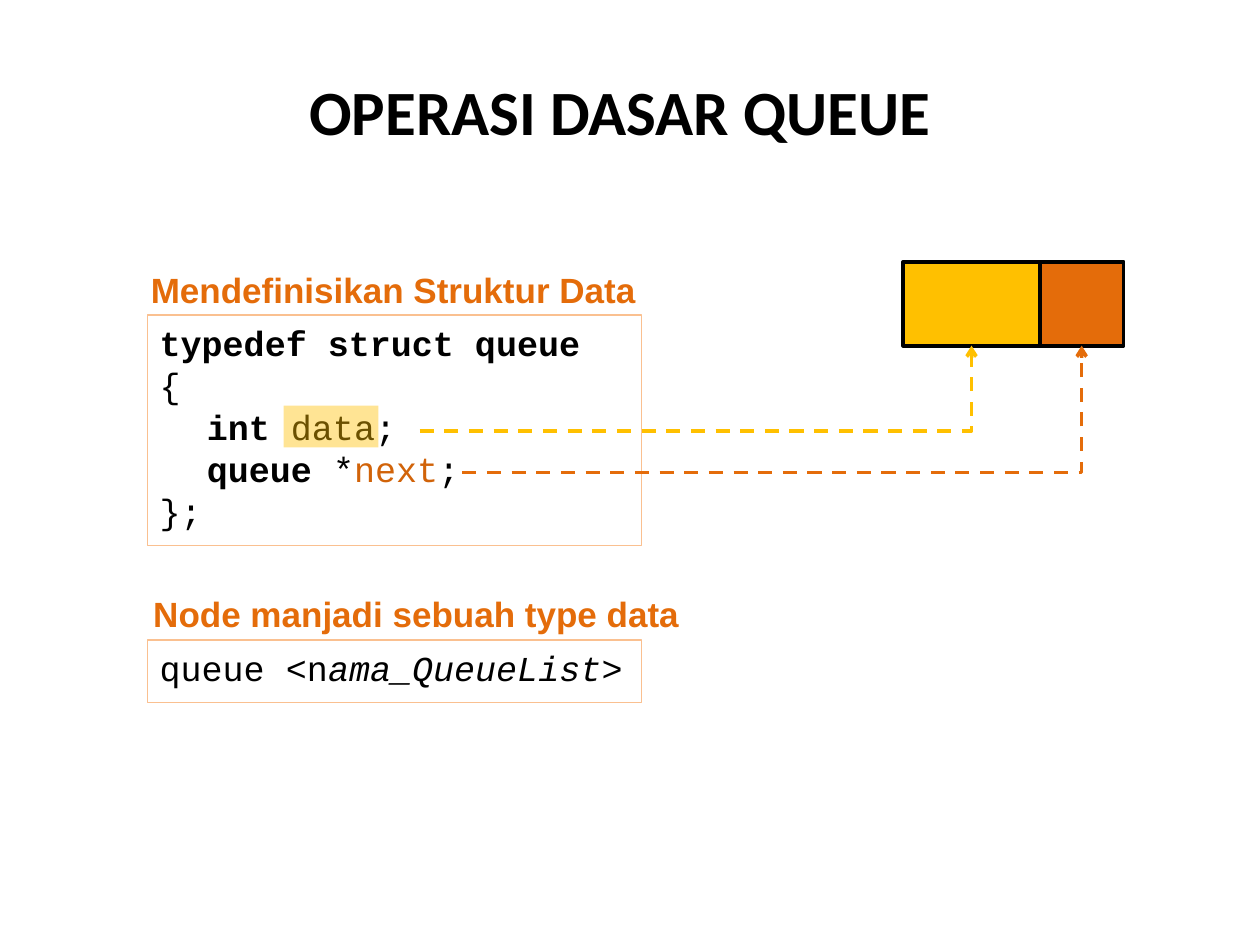
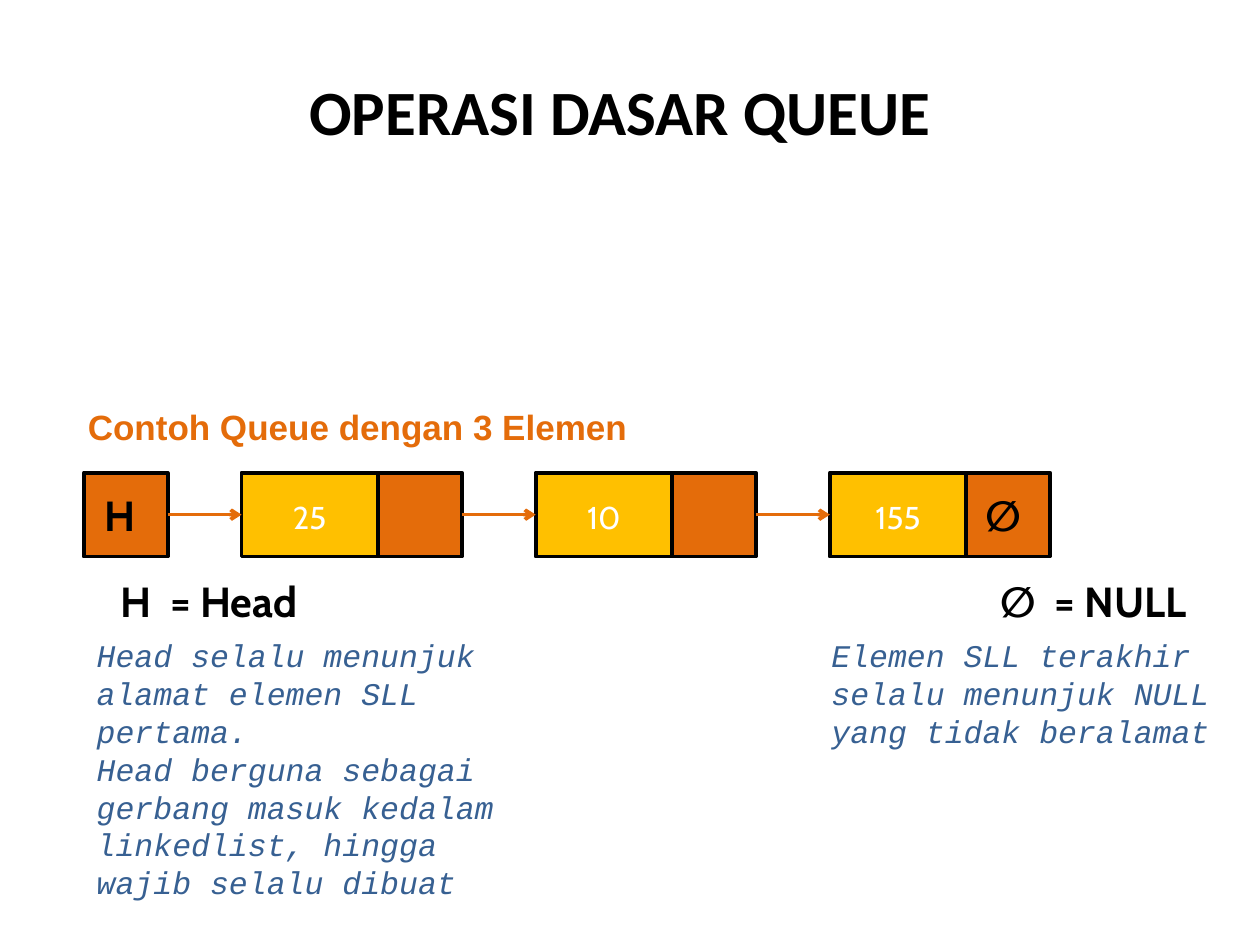
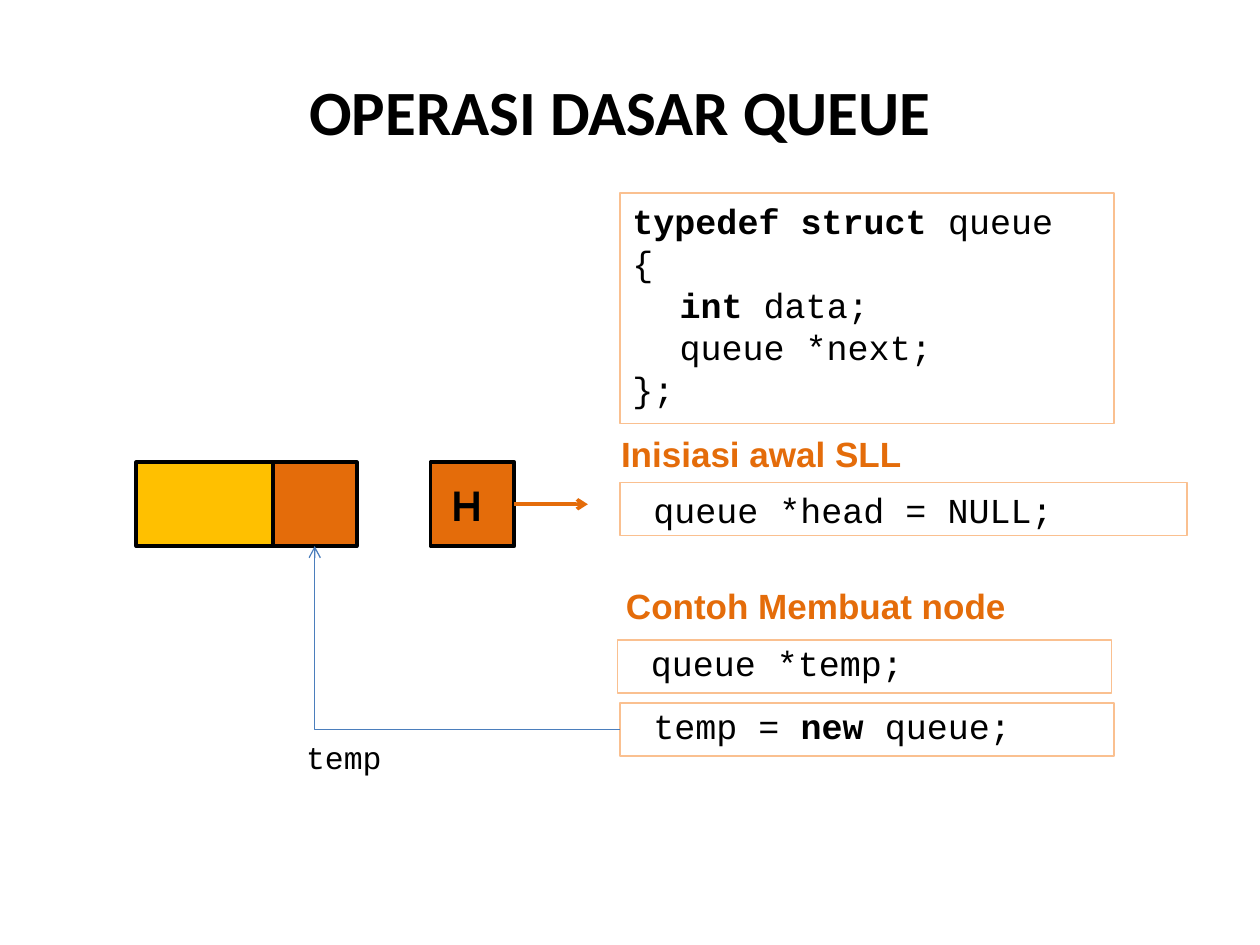
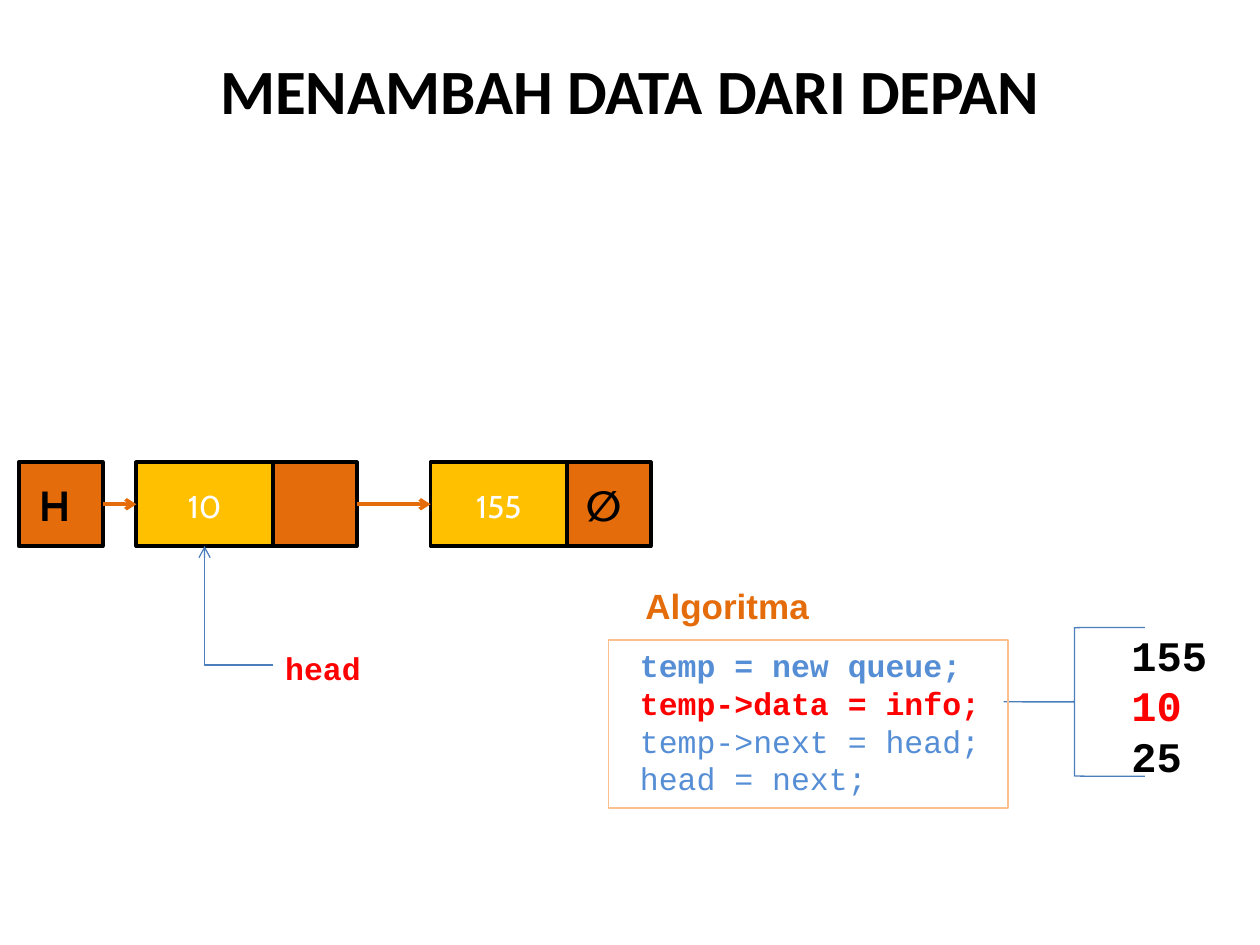
import dataclasses
from typing import NamedTuple, Optional

import lxml.etree
import pptx
import pptx.dml.color
import pptx.enum.dml
import pptx.enum.shapes
import pptx.enum.text
import pptx.oxml.ns
import pptx.presentation
import pptx.shapes.autoshape
import pptx.shapes.connector
import pptx.slide
import pptx.util

Cm = pptx.util.Cm
Pt = pptx.util.Pt
qn = pptx.oxml.ns.qn
RECTANGLE = pptx.enum.shapes.MSO_SHAPE.RECTANGLE
CENTER = pptx.enum.text.PP_ALIGN.CENTER
TOP = pptx.enum.text.MSO_ANCHOR.TOP
MIDDLE = pptx.enum.text.MSO_ANCHOR.MIDDLE

COLOURS = {
    "black": "000000",
    "white": "FFFFFF",
    "data": "FFC000",
    "pointer": "E46C0A",
    "next": "D16309",
    "panel": "FAC090",
    "note": "376092",
    "step": "558ED5",
    "link": "4B7EBC",
    "red": "FF0000",
}

# All lengths below are centimetres.
CELL = 1.69
DATA_WIDTH = 2.75
CODE_INDENT = 0.95
CAPTION_HEIGHT = 1.27
CHAIN_STEP = 5.93


@dataclasses.dataclass(frozen=True)
class Style:
    font: str
    size: float
    colour: str = "black"
    bold: bool = False
    italic: bool = False


class Run(NamedTuple):
    text: str
    style: Style


@dataclasses.dataclass(frozen=True)
class Line:
    runs: tuple[Run, ...]
    indent: float = 0


class Box(NamedTuple):
    left: float
    top: float
    width: float
    height: float


class Node(NamedTuple):
    data: pptx.shapes.autoshape.Shape
    pointer: pptx.shapes.autoshape.Shape


TITLE = Style("Calibri", 36, bold=True)
CAPTION = Style("Arial", 20, "pointer", bold=True)
CODE = Style("Courier New", 20)
KEYWORD = dataclasses.replace(CODE, bold=True)
STEP = Style("Courier New", 18, "step")
NOTE = Style("Courier New", 18, "note", italic=True)
VALUE = Style("Cabin", 18, "white")
SYMBOL = Style("Cabin", 24, bold=True)
NUMBER = Style("Courier New", 24, bold=True)


def line(text: str, style: Style, indent: float = 0) -> Line:
    return Line((Run(text, style),), indent)


def rgb(name: str) -> pptx.dml.color.RGBColor:
    return pptx.dml.color.RGBColor.from_string(COLOURS[name])


def write(frame, lines: list[Line], align=None, anchor=TOP, spacing: Optional[float] = None) -> None:
    frame.word_wrap = True
    frame.vertical_anchor = anchor
    for number, content in enumerate(lines):
        paragraph = frame.add_paragraph() if number else frame.paragraphs[0]
        paragraph.alignment = align or pptx.enum.text.PP_ALIGN.LEFT
        if spacing:
            paragraph.line_spacing = spacing
        if content.indent:
            paragraph._p.get_or_add_pPr().set("marL", str(Cm(content.indent)))
        for text, style in content.runs:
            run = paragraph.add_run()
            run.text = text
            run.font.name = style.font
            run.font.size = Pt(style.size)
            run.font.bold = style.bold
            run.font.italic = style.italic
            run.font.color.rgb = rgb(style.colour)


def add_text(slide: pptx.slide.Slide, box: Box, lines: list[Line], align=None,
             anchor=TOP, top_inset: float = 0.13) -> None:
    frame = slide.shapes.add_textbox(*map(Cm, box)).text_frame
    frame.margin_top = Cm(top_inset)
    write(frame, lines, align, anchor)


def add_figure(shapes, box: Box, fill: Optional[str] = None, outline: Optional[str] = None,
               weight: float = 0.75, kind=RECTANGLE) -> pptx.shapes.autoshape.Shape:
    figure = shapes.add_shape(kind, *map(Cm, box))
    figure.shadow.inherit = False
    if fill:
        figure.fill.solid()
        figure.fill.fore_color.rgb = rgb(fill)
    else:
        figure.fill.background()
    if outline:
        figure.line.color.rgb = rgb(outline)
        figure.line.width = Pt(weight)
    else:
        figure.line.fill.background()
    return figure


def add_title(slide: pptx.slide.Slide, text: str, left: float = 1.07, top: float = 0.64) -> None:
    add_text(slide, Box(left, top, 22.86, 3.18), [line(text, TITLE)], CENTER, MIDDLE)


def add_caption(slide: pptx.slide.Slide, left: float, top: float, width: float,
                text: str, indent: float = 0) -> None:
    add_text(slide, Box(left, top, width, CAPTION_HEIGHT), [line(text, CAPTION, indent)])


def add_panel(slide: pptx.slide.Slide, box: Box, lines: list[Line],
              spacing: Optional[float] = None) -> None:
    """Outlined box of code."""
    panel = add_figure(slide.shapes, box, outline="panel")
    write(panel.text_frame, lines, spacing=spacing)


def add_pointer(slide: pptx.slide.Slide, left: float, top: float,
                symbol: str = "") -> pptx.shapes.autoshape.Shape:
    cell = add_figure(slide.shapes, Box(left, top, CELL, CELL), "pointer", "black", 2.25)
    if symbol:
        add_text(slide, Box(left + 0.03, top + 0.21, 1.42, 1.27), [line(symbol, SYMBOL)], CENTER)
    return cell


def add_node(slide: pptx.slide.Slide, left: float, top: float,
             value: str = "", symbol: str = "") -> Node:
    """Data cell with its value, and the pointer cell to its right."""
    pointer = add_pointer(slide, left + DATA_WIDTH, top, symbol)
    shapes = slide.shapes.add_group_shape().shapes if value else slide.shapes
    data = add_figure(shapes, Box(left, top, DATA_WIDTH, CELL), "data", "black", 2.25)
    if value:
        width = 0.51 + 0.36 * len(value)
        label = add_figure(
            shapes, Box(left + (DATA_WIDTH - width) / 2, top + 0.38, width, 1.02), "data")
        write(label.text_frame, [line(value, VALUE)], CENTER)
        label.text_frame.word_wrap = False
    return Node(data, pointer)


def style_arrow(arrow: pptx.shapes.connector.Connector, colour: str,
                weight: float, dashed: bool = False) -> None:
    arrow.line.color.rgb = rgb(colour)
    arrow.line.width = Pt(weight)
    if dashed:
        arrow.line.dash_style = pptx.enum.dml.MSO_LINE.DASH
    properties = arrow._element.spPr
    lxml.etree.SubElement(properties.find(qn("a:ln")), qn("a:tailEnd"), type="arrow")
    lxml.etree.SubElement(properties, qn("a:effectLst"))


def add_link(slide: pptx.slide.Slide, source: pptx.shapes.autoshape.Shape,
             target: Optional[pptx.shapes.autoshape.Shape] = None, reach: float = 1.48) -> None:
    """Arrow from a pointer cell to the next data cell, or to a free end."""
    right, middle = source.left + source.width, source.top + source.height // 2
    link = slide.shapes.add_connector(
        pptx.enum.shapes.MSO_CONNECTOR.STRAIGHT, right, middle, right + Cm(reach), middle)
    link.begin_connect(source, 3)
    if target is not None:
        link.end_connect(target, 1)
    style_arrow(link, "pointer", 2)


def add_elbow(slide: pptx.slide.Slide, left: float, top: float,
              target: pptx.shapes.autoshape.Shape, colour: str = "link",
              weight: float = 0.75, dashed: bool = False) -> None:
    """Arrow running sideways, then up to the bottom of the target."""
    elbow = slide.shapes.add_connector(
        pptx.enum.shapes.MSO_CONNECTOR.ELBOW, Cm(left), Cm(top),
        target.left + target.width // 2, target.top + target.height)
    elbow._element.spPr.find(qn("a:prstGeom")).set("prst", "bentConnector2")
    style_arrow(elbow, colour, weight, dashed)


def struct_code(name: Style, next_type: Style, next_name: Style) -> list[Line]:
    return [
        Line((Run("typedef struct ", KEYWORD), Run("queue", name))),
        line("{", CODE),
        Line((Run("int", KEYWORD), Run(" data;", CODE)), CODE_INDENT),
        Line((Run("queue", next_type), Run(" *", CODE), Run("next", next_name),
              Run(";", CODE)), CODE_INDENT),
        line("};", CODE),
    ]


def build_structure(slide: pptx.slide.Slide) -> None:
    add_title(slide, "OPERASI DASAR QUEUE")
    add_panel(slide, Box(2.97, 6.35, 9.96, 4.65),
              struct_code(KEYWORD, KEYWORD, dataclasses.replace(CODE, colour="next")))
    add_caption(slide, 2.79, 5.28, 11, "Mendefinisikan Struktur Data")
    node = add_node(slide, 18.21, 5.28)
    add_elbow(slide, 8.46, 8.69, node.data, "data", 2, dashed=True)
    add_elbow(slide, 9.32, 9.53, node.pointer, "pointer", 2, dashed=True)
    highlight = add_figure(slide.shapes, Box(5.72, 8.18, 1.91, 0.84), "data")
    tint = highlight._element.spPr.find(".//" + qn("a:srgbClr"))
    lxml.etree.SubElement(tint, qn("a:alpha"), val="42000")
    italic = dataclasses.replace(CODE, italic=True)
    add_panel(slide, Box(2.97, 12.9, 9.96, 1.27), [
        Line((Run("queue <n", CODE), Run("ama_QueueList", italic), Run(">", CODE)))])
    add_caption(slide, 2.84, 11.81, 13.26, "Node manjadi sebuah type data")


def build_example(slide: pptx.slide.Slide) -> None:
    add_title(slide, "OPERASI DASAR QUEUE")
    chain_top = 9.53
    previous = add_pointer(slide, 1.69, chain_top, "H")
    for place, (value, symbol) in enumerate([("25", ""), ("10", ""), ("155", "∅")]):
        node = add_node(slide, 4.87 + place * CHAIN_STEP, chain_top, value, symbol)
        add_link(slide, previous, node.data)
        previous = node.pointer
    for left, legend in [(1.35, "H  = Head"), (19.18, "∅  = NULL")]:
        add_text(slide, Box(left, 11.48, 5.72, 1.27), [line(legend, SYMBOL)], CENTER)
    add_caption(slide, 1.52, 8.05, 16.69, "Contoh Queue dengan 3 Elemen")
    add_text(slide, Box(1.7, 12.7, 8.89, 5.72), [
        line("Head selalu menunjuk alamat elemen SLL pertama.", NOTE),
        line("Head berguna sebagai gerbang masuk kedalam linkedlist, "
             "hingga wajib selalu dibuat", NOTE)])
    add_text(slide, Box(16.51, 12.7, 8.46, 2.54), [
        line("Elemen SLL terakhir selalu menunjuk NULL yang tidak beralamat", NOTE)])


def build_initiation(slide: pptx.slide.Slide) -> None:
    add_title(slide, "OPERASI DASAR QUEUE")
    space = 0.42
    add_panel(slide, Box(12.5, 9.73, 11.43, 1.07), [line("queue *head = NULL;", CODE, space)])
    add_caption(slide, 12.27, 8.59, 11, "Inisiasi awal SLL")
    add_caption(slide, 12.37, 11.66, 9.7, "Contoh Membuat node")
    add_panel(slide, Box(12.5, 3.89, 9.96, 4.65), struct_code(CODE, CODE, CODE))
    add_panel(slide, Box(12.45, 12.9, 9.96, 1.07), [line("queue *temp;", CODE, space)], 0.9)
    add_panel(slide, Box(12.5, 14.17, 9.96, 1.07), [
        Line((Run("temp = ", CODE), Run("new ", KEYWORD), Run("queue;", CODE)), space)], 0.9)
    node = add_node(slide, 2.75, 9.32)
    add_elbow(slide, 12.5, 14.71, node.pointer)
    add_text(slide, Box(5.92, 14.4, 3.18, 1.47),
             [line("temp", Style("Courier New", 18))], top_inset=0.47)
    add_link(slide, add_pointer(slide, 8.68, 9.32, "H"))


def build_insertion(slide: pptx.slide.Slide) -> None:
    add_title(slide, "MENAMBAH DATA DARI DEPAN", 1.27, 0.2)
    add_caption(slide, 12.37, 11.66, 9.7, "Algoritma", 0.39)
    chain_top = 9.32
    head = add_pointer(slide, 0.38, chain_top, "H")
    first = add_node(slide, 2.75, chain_top, "10")
    last = add_node(slide, 2.75 + CHAIN_STEP, chain_top, "155", "∅")
    add_link(slide, head, first.data)
    add_link(slide, first.pointer, last.data)

    brace = add_figure(slide.shapes, Box(20.24, 12.65, 2.84, 3), outline="link",
                       kind=pptx.enum.shapes.MSO_SHAPE.LEFT_BRACE)
    brace.adjustments[0] = 0.002
    current = dataclasses.replace(NUMBER, colour="red")
    add_text(slide, Box(22.56, 12.14, 2.54, 3.25),
             [line("155", NUMBER), line("10", current), line("25", NUMBER)], top_inset=0.55)

    active = dataclasses.replace(STEP, colour="red", bold=True)
    steps = [
        ("temp = new queue;", dataclasses.replace(STEP, bold=True)),
        ("temp->data = info;", active),
        ("temp->next = head;", STEP),
        ("head = next;", STEP),
    ]
    add_panel(slide, Box(12.27, 12.9, 8.05, 3.39),
              [line(text, style, 0.38) for text, style in steps])
    add_elbow(slide, 5.5, 13.41, first.data)
    add_text(slide, Box(5.5, 12.62, 3.18, 1.47), [line("head", active)], top_inset=0.47)


def main() -> None:
    presentation = pptx.Presentation()
    presentation.slide_width = Cm(25.4)
    presentation.slide_height = Cm(19.05)
    blank = presentation.slide_layouts[6]
    for build in (build_structure, build_example, build_initiation, build_insertion):
        build(presentation.slides.add_slide(blank))
    presentation.save("out.pptx")


if __name__ == "__main__":
    main()
